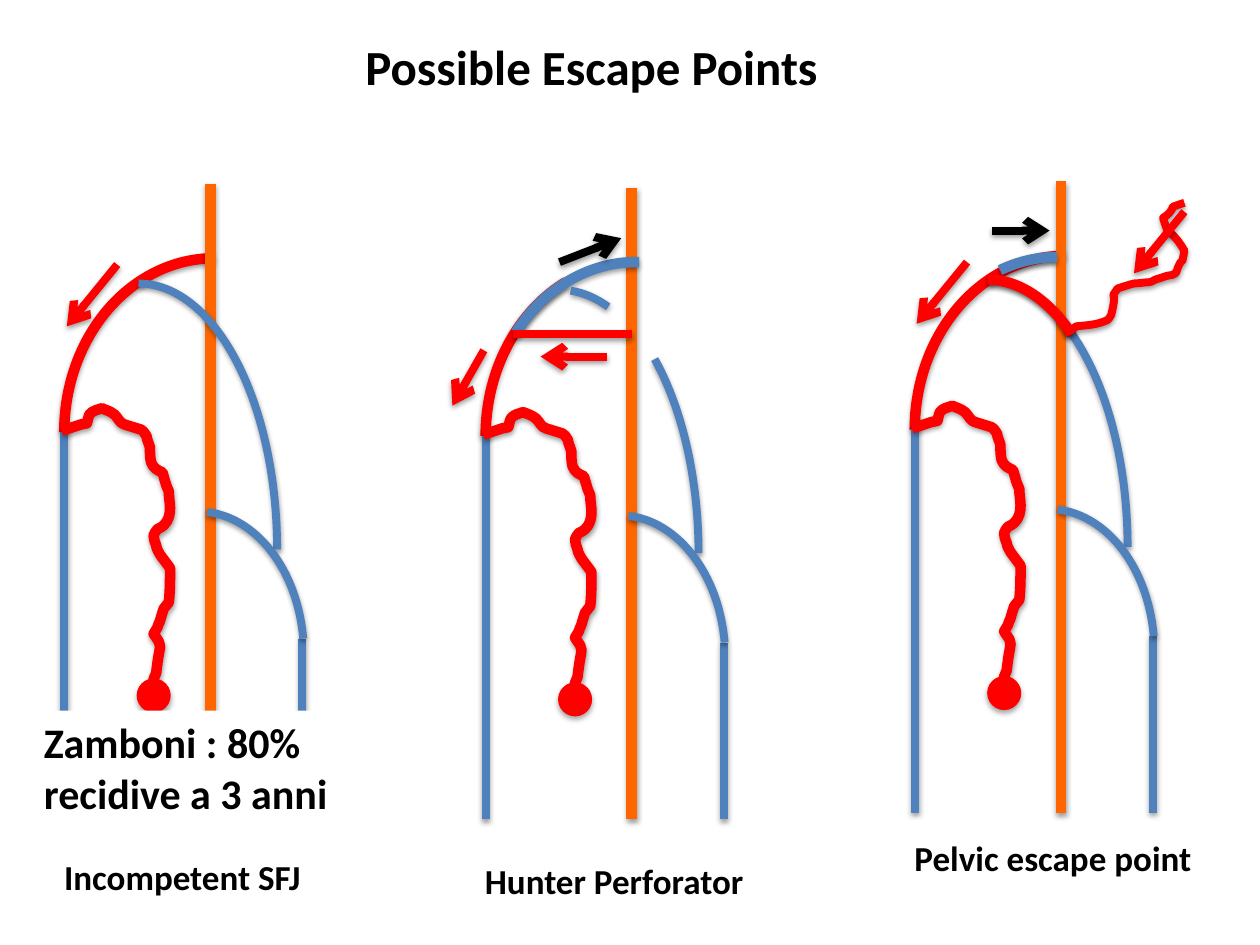
from typing import NamedTuple

from lxml import etree
from pptx import Presentation
from pptx.dml.color import RGBColor
from pptx.enum import shapes as kinds, text as txt
from pptx.oxml.ns import qn
from pptx.util import Pt

RED, BLUE, ORANGE, BLACK, WHITE = "FF0000", "4F81BD", "FF6600", "000000", "FFFFFF"
THIN, THICK = 4.5, 6
LEFT_SIZE = (171.4, 198.7)
RIGHT_SIZE = (158.4, 303.8)
QUARTER = (162, 0)

# A pair is a line to a point, a six is a Bezier curve.
VEIN = [
    (35.3, 246.2), (46.1, 242.6), (49.7, 241.9),
    (50.4, 239.8, 50.4, 238.3, 51.1, 236.9),
    (52.6, 234.7, 56.2, 234, 58.3, 233.3),
    (61.2, 234.7, 62.6, 234.7, 65.5, 236.9),
    (67.7, 239, 68.4, 241.9, 71.3, 242.6),
    (80.6, 245.5),
    (81.4, 246.2, 82.8, 247, 82.8, 247.7),
    (83.5, 248.4, 84.2, 249.8, 84.2, 251.3),
    (85, 252.7, 85, 254.2, 85.7, 255.6),
    (85.7, 258.5, 85.7, 261.4, 86.4, 264.2),
    (87.8, 267.8, 90, 268.6, 92.9, 270),
    (95, 277.2), (96.5, 280.8),
    (96.5, 284.4, 97.2, 287.3, 97.2, 290.2),
    (97.2, 293.8, 96.5, 297.4, 93.6, 300.2),
    (92.9, 301, 91.4, 301.7, 90, 302.4),
    (89.3, 303.8, 87.8, 304.6, 87.8, 306),
    (87.8, 308.2, 88.6, 309.6, 89.3, 311.8),
    (89.3, 313.2, 90.7, 315.4, 91.4, 316.8),
    (92.9, 319, 95.8, 322.6, 97.2, 324.7),
    (97.2, 331.2, 97.2, 337.7, 96.5, 344.2),
    (95.8, 345.6, 94.3, 346.3, 93.6, 347.8),
    (92.9, 349.9, 92.2, 352.1, 91.4, 355),
    (90.7, 355.7, 90.7, 357.1, 90, 358.6),
    (87.8, 362.2),
    (93.6, 370.8, 91.4, 365, 89.3, 384.5),
    (89.3, 385.9, 87.8, 386.6, 87.8, 388.1),
    (87.8, 390.2, 87.8, 393.1, 87.8, 395.3),
]
PELVIC = [
    (676.8, 115.9),
    (674.6, 116.6, 672.5, 117.4, 670.3, 118.1),
    (669.6, 118.8, 669.6, 121, 668.2, 121.7),
    (667.4, 123.1, 666, 123.1, 664.6, 124.6),
    (665.3, 126, 665.3, 127.4, 666, 128.9),
    (667.4, 133.2, 668.9, 132.5, 671.8, 136.1),
    (673.9, 138.2, 676.8, 143.3, 676.8, 143.3),
    (674.6, 154.8, 676.8, 144.7, 673.2, 152.6),
    (672.5, 154.1, 672.5, 155.5, 671.8, 156.2),
    (670.3, 157.7, 668.9, 157, 666.7, 157.7),
    (664.6, 158.4, 662.4, 159.1, 660.2, 159.8),
    (658.8, 160.6, 657.4, 161.3, 656.6, 161.3),
    (653.8, 161.3, 650.9, 162, 648, 162),
    (645.1, 162.7, 638.6, 164.9, 638.6, 164.9),
    (632.9, 173.5, 639.4, 162, 635, 180),
    (634.3, 181.4, 633.6, 182.2, 632.9, 182.9),
    (626.4, 185.8, 621.4, 185.8, 614.9, 186.5),
    (614.2, 187.2, 613.4, 187.9, 612, 188.6),
    (611.3, 189.4, 608.4, 190.1, 608.4, 190.1),
]


class Leg(NamedTuple):
    x: float
    y: float
    flow: tuple
    left: tuple = QUARTER
    right: tuple = QUARTER


class Label(NamedTuple):
    text: str
    box: tuple
    size: float = 20
    wrap: bool = False
    fill: str | None = None


LEGS = [
    Leg(0, 0, (67, 151.2, 38.2, 186.5)),
    Leg(486, -1.4, (552.6, 149.8, 523.8, 185)),
    Leg(240.8, 2.2, (276.5, 200.2, 258.5, 231.8), (176.58, 0), (177.61, 0)),
]
LABELS = [
    Label("Incompetent SFJ", (29.5, 485.3, 152.6, 31.7)),
    Label("Pelvic escape point", (515.5, 474.5, 175, 31.7)),
    Label("Hunter Perforator", (270, 487.4, 165.6, 31.7)),
    Label("Zamboni : 80% recidive a 3 anni", (18, 406.1, 222.5, 65.5), 24, True, WHITE),
]


def paint(fmt, color: str) -> None:
    fmt.solid()
    fmt.fore_color.rgb = RGBColor.from_string(color)


def shade(shape, alpha: int = 38, dist: float = 1.6) -> None:
    """Give the shape a soft shadow straight below it."""
    effects = etree.SubElement(shape._element.spPr, qn("a:effectLst"))
    outer = etree.SubElement(effects, qn("a:outerShdw"), blurRad=str(Pt(3.1)),
                             dist=str(Pt(dist)), dir="5400000", rotWithShape="0")
    black = etree.SubElement(outer, qn("a:srgbClr"), val=BLACK)
    etree.SubElement(black, qn("a:alpha"), val=str(alpha * 1000))


def stroke(shape, color: str, width: float) -> None:
    paint(shape.line.fill, color)
    shape.line.width = Pt(width)


def line(slide, ends: tuple, color: str, width: float = THIN, arrow: bool = False) -> None:
    link = slide.shapes.add_connector(kinds.MSO_CONNECTOR.STRAIGHT, *map(Pt, ends))
    stroke(link, color, width)
    if arrow:
        etree.SubElement(link.line._get_or_add_ln(), qn("a:tailEnd"), type="arrow")
    shade(link)


def arc(slide, x: float, y: float, size: tuple, color: str, width: float = THIN,
        span: tuple = QUARTER, flip: bool = False) -> None:
    bow = slide.shapes.add_shape(kinds.MSO_SHAPE.ARC, *map(Pt, (x, y, *size)))
    bow.adjustments[0], bow.adjustments[1] = span
    bow.fill.background()
    stroke(bow, color, width)
    if flip:
        bow._element.spPr.find(qn("a:xfrm")).set("flipH", "1")
    shade(bow)


def curve(slide, steps: list, color: str, width: float, dx: float = 0, dy: float = 0) -> None:
    """Draw an open outline; each six-number step becomes a Bezier curve."""
    spots = [(Pt(s[i] + dx), Pt(s[i + 1] + dy)) for s in steps for i in range(0, len(s), 2)]
    pen = slide.shapes.build_freeform(*spots[0])
    pen.add_line_segments(spots[1:], close=False)
    shape = pen.convert_to_shape()
    track = shape._element.find(".//" + qn("a:path"))
    parts = iter(track.findall(qn("a:lnTo")))
    for step in steps[1:]:
        first = next(parts)
        if len(step) == 6:
            bend = etree.Element(qn("a:cubicBezTo"))
            track.replace(first, bend)
            bend.append(first[0])
            for _ in range(2):
                part = next(parts)
                bend.append(part[0])
                track.remove(part)
    shape.fill.background()
    stroke(shape, color, width)
    shade(shape)


def write(shape, words: str, size: float, wrap: bool = False) -> None:
    frame = shape.text_frame
    frame.word_wrap = wrap
    frame.auto_size = txt.MSO_AUTO_SIZE.NONE
    frame.vertical_anchor = txt.MSO_ANCHOR.TOP
    para = frame.paragraphs[0]
    para.alignment = txt.PP_ALIGN.LEFT
    run = para.add_run()
    run.text = words
    run.font.name, run.font.size, run.font.bold = "Calibri", Pt(size), True
    paint(run.font.fill, BLACK)


def draw_leg(slide, leg: Leg) -> None:
    x, y = leg.x, leg.y
    foot = y + 465.8
    arc(slide, x + 36.7, y + 147.6, LEFT_SIZE, RED, THICK, leg.left, flip=True)
    line(slide, (x + 120.2, y + 105.1, x + 120.2, foot), ORANGE, THICK)
    arc(slide, x, y + 162, RIGHT_SIZE, BLUE, span=leg.right)
    line(slide, (x + 36.7, y + 247, x + 36.7, foot), BLUE)
    line(slide, (x + 172.8, y + 365, x + 172.8, foot), BLUE)
    arc(slide, x + 52.6, y + 292.3, (121, 163.4), BLUE, span=(164.21, 210.86))
    curve(slide, VEIN, RED, THICK, x, y)
    dot = slide.shapes.add_shape(kinds.MSO_SHAPE.OVAL,
                                 *map(Pt, (x + 78.5, y + 388.1, 18.7, 18.7)))
    paint(dot.fill, RED)
    stroke(dot, RED, 0.75)
    shade(dot, 35, 1.8)
    line(slide, leg.flow, RED, arrow=True)


def draw_pelvic(slide) -> None:
    arc(slide, 518.4, 146.9, LEFT_SIZE, BLUE, THICK, (162, 173.74), flip=True)
    arc(slide, 485.3, 159.8, RIGHT_SIZE, RED, THICK, (162, 175.08))
    curve(slide, PELVIC, RED, THIN)
    line(slide, (676.8, 121, 648, 156.2), RED, arrow=True)
    line(slide, (566.6, 131.8, 599.8, 131.8), BLACK, arrow=True)


def draw_hunter(slide) -> None:
    arc(slide, 277.9, 149.8, LEFT_SIZE, BLUE, THICK, (161.44, 191.61), flip=True)
    line(slide, (319.7, 149.8, 355, 136.1), BLACK, arrow=True)
    line(slide, (361.4, 190.8, 293, 190.8), RED)
    line(slide, (347, 203.8, 308.9, 203.8), RED, arrow=True)
    arc(slide, 240.5, 165.6, RIGHT_SIZE, BLUE, span=(163.46, 168.67))


def main() -> None:
    deck = Presentation()
    deck.slide_width, deck.slide_height = Pt(720), Pt(540)
    slide = deck.slides.add_slide(deck.slide_layouts[5])
    title = slide.shapes.title
    title.left, title.top, title.width, title.height = map(Pt, (201.6, 17.3, 277.2, 41))
    write(title, "Possible Escape Points", 28)
    for leg in LEGS:
        draw_leg(slide, leg)
    draw_pelvic(slide)
    draw_hunter(slide)
    for label in LABELS:
        box = slide.shapes.add_textbox(*map(Pt, label.box))
        if label.fill:
            paint(box.fill, label.fill)
        write(box, label.text, label.size, label.wrap)
    deck.save("out.pptx")


if __name__ == "__main__":
    main()
